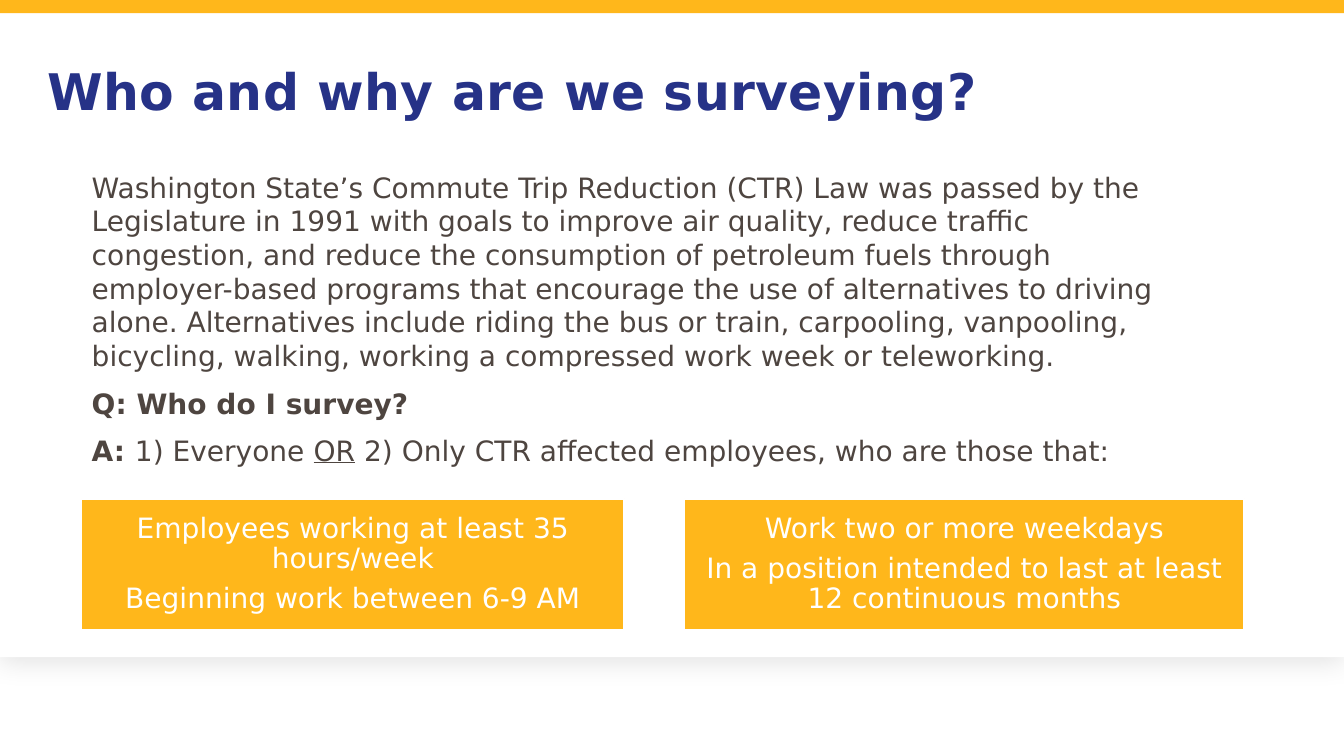
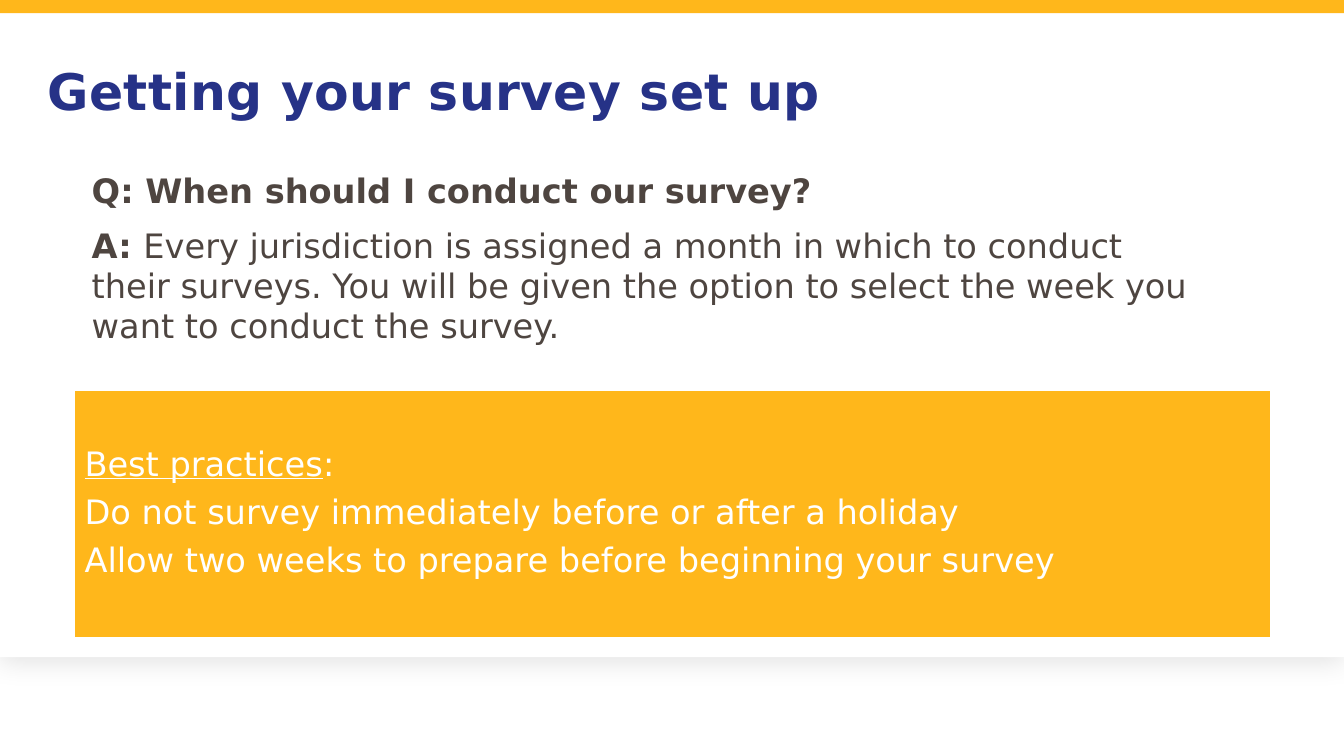
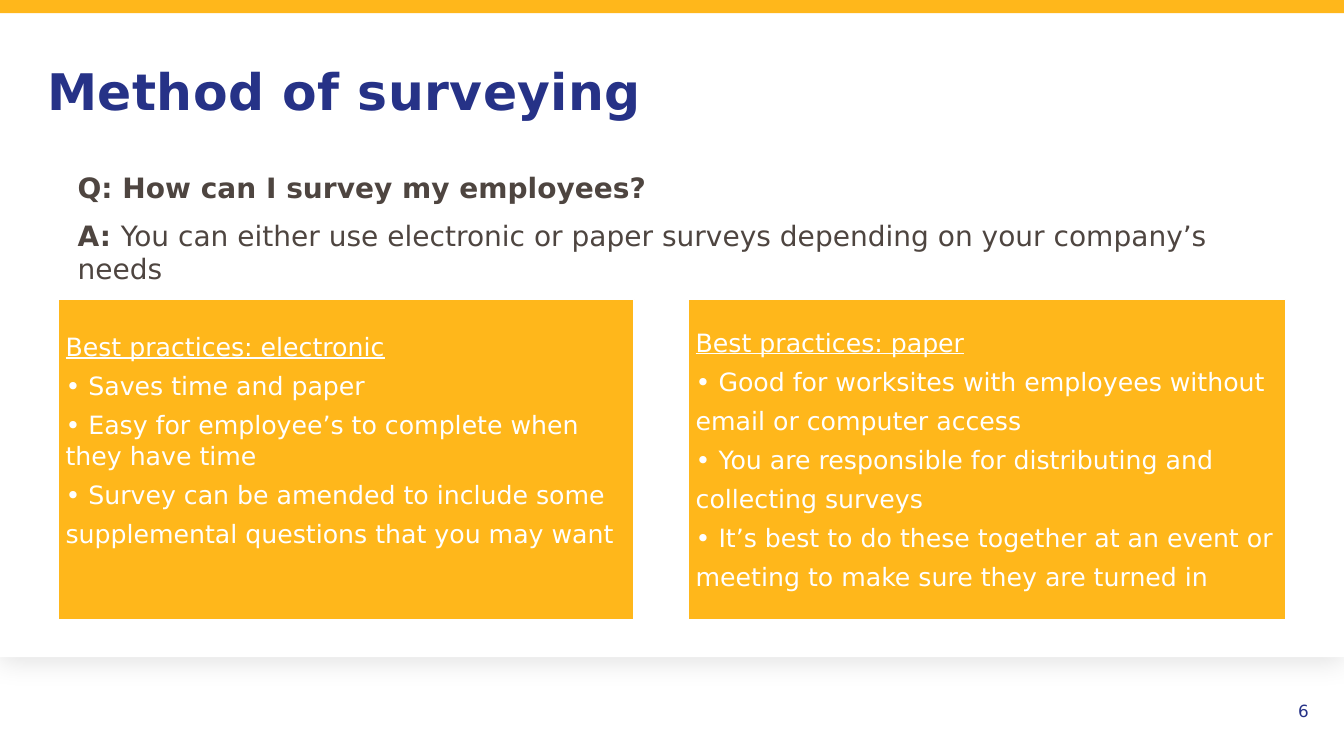
"""Build three slides on running a commute survey."""
from lxml import etree
from pptx import Presentation
from pptx.dml.color import RGBColor
from pptx.enum.shapes import MSO_SHAPE
from pptx.enum.text import MSO_ANCHOR, MSO_AUTO_SIZE, PP_ALIGN
from pptx.oxml.ns import qn
from pptx.util import Inches, Pt

RECT = MSO_SHAPE.RECTANGLE
LEFT, MID, RIGHT = PP_ALIGN.LEFT, PP_ALIGN.CENTER, PP_ALIGN.RIGHT
FIXED = MSO_AUTO_SIZE.NONE
TOP, CENTER = MSO_ANCHOR.TOP, MSO_ANCHOR.MIDDLE
FONT = "DejaVu Sans"
HEX = {"gold": "FFB71B", "navy": "263287", "gray": "4E4540", "white": "FFFFFF"}
WIDE, HIGH = 13.33, 7.5
BAND, CARD = 0.13, 6.52
HEAD = (0.37, 0.47, 9.72, 0.86)
BODY = (0.81, 1.64, 11.15, 4.27)
PAGE = (12.53, 6.85, 0.55, 0.4)

SLIDES = [
    {
        "title": "Who and why are we surveying?",
        "size": 20,
        "body": [
            "Washington State’s Commute Trip Reduction (CTR) Law was passed by the "
            "Legislature in 1991 with goals to improve air quality, reduce traffic "
            "congestion, and reduce the consumption of petroleum fuels through "
            "employer-based programs that encourage the use of alternatives to driving "
            "alone. Alternatives include riding the bus or train, carpooling, vanpooling, "
            "bicycling, walking, working a compressed work week or teleworking.",
            [("Q: Who do I survey?", "b")],
            [("A: ", "b"), ("1) Everyone ", ""), ("OR", "u"),
             (" 2) Only CTR affected employees, who are those that:", "")],
        ],
        "form": {"size": 20, "align": MID, "line": 0.9, "pad": 0.08},
        "row": (4.95, 1.3),
        "boxes": [
            {"span": (0.81, 5.38),
             "text": ["Employees working at least 35 hours/week",
                      "Beginning work between 6-9 AM"]},
            {"span": (6.79, 5.55),
             "text": ["Work two or more weekdays",
                      "In a position intended to last at least 12 continuous months"]},
        ],
    },
    {
        "title": "Getting your survey set up",
        "size": 24,
        "body": [
            [("Q: When should I conduct our survey?", "b")],
            [("A: ", "b"),
             ("Every jurisdiction is assigned a month in which to conduct their surveys. "
              "You will be given the option to select the week you want to conduct "
              "the survey.", "")],
        ],
        "form": {"size": 24, "line": 0.9, "pad": 0.1},
        "row": (3.87, 2.46),
        "boxes": [
            {"span": (0.74, 11.86),
             "text": [[("Best practices", "u"), (":", "")],
                      "Do not survey immediately before or after a holiday",
                      "Allow two weeks to prepare before beginning your survey"]},
        ],
    },
    {
        "title": "Method of surveying",
        "size": 20,
        "place": (0.67, 1.64, 12.33, 4.27),
        "page": "6",
        "body": [
            [("Q: How can I survey my employees?", "b")],
            [("A: ", "b"),
             ("You can either use electronic or paper surveys depending on your "
              "company’s needs", "")],
        ],
        "form": {"size": 18, "pad": 0.07},
        "row": (2.97, 3.18),
        "boxes": [
            {"span": (0.58, 5.71), "foot": 0.46,
             "text": [[("Best practices: electronic", "u")],
                      "• Saves time and paper",
                      "• Easy for employee’s to complete when they have time",
                      "• Survey can be amended to include some",
                      "supplemental questions that you may want"]},
            {"span": (6.83, 5.92),
             "text": [[("Best practices: paper", "u")],
                      "• Good for worksites with employees without",
                      "email or computer access",
                      "• You are responsible for distributing and",
                      "collecting surveys",
                      "• It’s best to do these together at an event or",
                      "meeting to make sure they are turned in"]},
        ],
    },
]


def color(name):
    return RGBColor.from_string(HEX[name])


def put(shape, place):
    shape.left, shape.top, shape.width, shape.height = map(Inches, place)


def write(shape, paras, size=20, ink="white", align=LEFT, anchor=CENTER, line=1.0,
          before=0, after=0, pad=None, foot=None, bold=False, track=0, plain=False):
    frame = shape.text_frame
    frame.word_wrap, frame.auto_size = True, FIXED
    frame.vertical_anchor = anchor
    if pad is not None:
        frame.margin_left = frame.margin_right = frame.margin_top = Inches(pad)
        frame.margin_bottom = Inches(foot or pad)
    for i, runs in enumerate(paras):
        para = frame.add_paragraph() if i else frame.paragraphs[0]
        if plain:
            props = para._p.get_or_add_pPr()
            props.set("marL", "0")
            props.set("indent", "0")
            etree.SubElement(props, qn("a:buNone"))
        para.alignment, para.line_spacing = align, line
        para.space_before = Pt(before if i else 0)
        para.space_after = Pt(after)
        for words, mark in [(runs, "")] if isinstance(runs, str) else runs:
            run = para.add_run()
            run.text = words
            font = run.font
            font.name, font.size = FONT, Pt(size)
            font.color.rgb = color(ink)
            font.bold, font.underline = bold or mark == "b", mark == "u"
            if track:
                run._r.get_or_add_rPr().set("spc", str(track))


def block(slide, place, fill, edge=None):
    shape = slide.shapes.add_shape(RECT, *map(Inches, place))
    shape.shadow.inherit = False
    shape.fill.solid()
    shape.fill.fore_color.rgb = color(fill)
    if edge:
        shape.line.color.rgb = color(edge)
        shape.line.width = Pt(1)
    else:
        shape.line.fill.background()
    return shape


def shade(shape):
    glow = etree.SubElement(shape._element.spPr.find(qn("a:effectLst")),
                            qn("a:outerShdw"), blurRad=str(Pt(19)), dist=str(Pt(5)),
                            dir="5400000", algn="t", rotWithShape="0")
    tint = etree.SubElement(glow, qn("a:srgbClr"), val="000000")
    etree.SubElement(tint, qn("a:alpha"), val="11000")


def dress(layout, slide):
    put(layout.placeholders[0], HEAD)
    put(layout.placeholders[1], BODY)
    card = block(slide, (0, 0, WIDE, CARD), "white")
    shade(card)
    band = block(slide, (0, 0, WIDE, BAND), "gold")
    for i, part in enumerate((card, band)):
        part._element.nvSpPr.cNvPr.set("id", str(20 + i))
        layout.shapes._spTree.insert(2 + i, part._element)


def fill(slide, data):
    write(slide.shapes.title, [data["title"]], size=36, ink="navy", bold=True, track=30)
    body = slide.placeholders[1]
    if "place" in data:
        put(body, data["place"])
    write(body, data["body"], size=data["size"], ink="gray", anchor=TOP, before=10,
          plain=True)
    top, high = data["row"]
    form = data["form"]
    for box in data["boxes"]:
        left, wide = box["span"]
        shape = block(slide, (left, top, wide, high), "gold", "white")
        write(shape, box["text"], after=0.35 * form["size"], foot=box.get("foot"), **form)
    if "page" in data:
        note = slide.shapes.add_textbox(*map(Inches, PAGE))
        write(note, [data["page"]], size=12, ink="navy", align=RIGHT)


def main():
    deck = Presentation()
    deck.slide_width, deck.slide_height = Inches(WIDE), Inches(HIGH)
    layout = deck.slide_layouts[1]
    for i, data in enumerate(SLIDES):
        slide = deck.slides.add_slide(layout)
        if i == 0:
            dress(layout, slide)
        fill(slide, data)
    deck.save("out.pptx")


if __name__ == "__main__":
    main()
